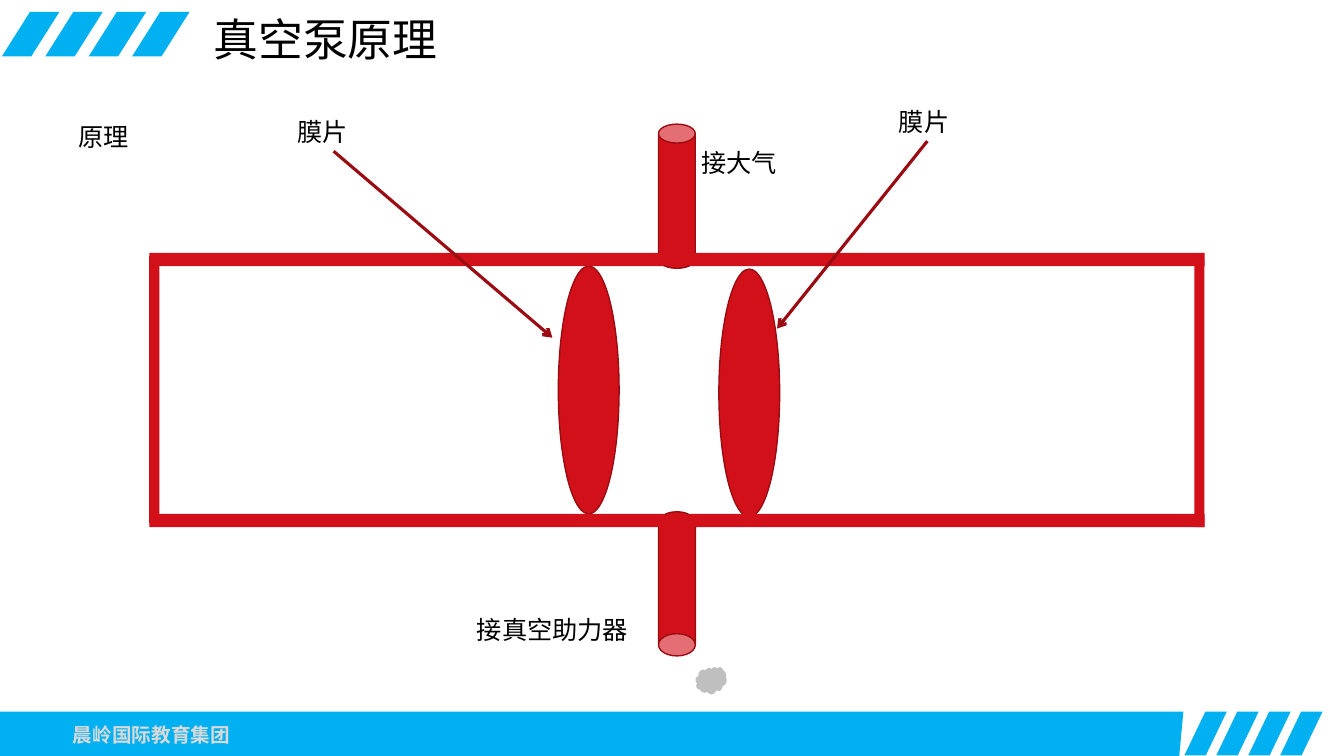
import pptx
import pptx.util
import pptx.dml.color
import pptx.enum.shapes
import pptx.enum.text
import pptx.oxml
import pptx.oxml.ns

Pt = pptx.util.Pt
RGBColor = pptx.dml.color.RGBColor
SHAPE = pptx.enum.shapes.MSO_SHAPE
ALIGN = pptx.enum.text.PP_ALIGN
ANCHOR = pptx.enum.text.MSO_ANCHOR

FONT = "Noto Sans CJK SC"
BLUE = RGBColor(0x00, 0xB0, 0xF0)
RED = RGBColor(0xD1, 0x10, 0x19)
DARK_RED = RGBColor(0x9B, 0x0C, 0x12)
BLACK = RGBColor(0x00, 0x00, 0x00)
PALE_GREY = RGBColor(0xD9, 0xD9, 0xD9)
CLOUD_GREY = RGBColor(0xBF, 0xBF, 0xBF)


def add_sub(parent, tag, **attributes):
    child = pptx.oxml.parse_xml(f"<{tag} {pptx.oxml.ns.nsdecls('a')}/>")
    for key, value in attributes.items():
        child.set(key, value)
    parent.append(child)


def add_text(slide, text, left, top, width, height, size=18, color=BLACK,
             bold=False, align=ALIGN.LEFT, anchor=ANCHOR.TOP):
    box = slide.shapes.add_textbox(Pt(left), Pt(top), Pt(width), Pt(height))
    frame = box.text_frame
    frame.word_wrap = True
    frame.vertical_anchor = anchor
    paragraph = frame.paragraphs[0]
    paragraph.alignment = align
    run = paragraph.add_run()
    run.text = text
    run.font.size = Pt(size)
    run.font.bold = bold
    run.font.color.rgb = color
    run.font.name = FONT
    add_sub(run.font._element, "a:ea", typeface=FONT)


def paint(shape, fill, line=None):
    shape.shadow.inherit = False
    shape.fill.solid()
    shape.fill.fore_color.rgb = fill
    if line is None:
        shape.line.fill.background()
    else:
        shape.line.color.rgb = line
        shape.line.width = Pt(1)


def add_preset(slide, kind, left, top, width, height, fill, line=None):
    shape = slide.shapes.add_shape(kind, Pt(left), Pt(top), Pt(width), Pt(height))
    paint(shape, fill, line)
    return shape


def add_polygon(slide, points, fill):
    corners = [(Pt(x), Pt(y)) for x, y in points]
    builder = slide.shapes.build_freeform(*corners[0])
    builder.add_line_segments(corners[1:], close=True)
    paint(builder.convert_to_shape(), fill)


def add_stripes(slide, left, top, height, slant, band, pitch):
    """Four slanted stripes, one every pitch."""
    for index in range(4):
        x = left + index * pitch
        add_polygon(slide, [(x + slant, top), (x, top + height),
                            (x + band, top + height), (x + slant + band, top)], BLUE)


def add_header(slide, left, top, height):
    add_stripes(slide, left, top, height, slant=20, band=21, pitch=31)
    add_text(slide, "真空泵原理", left + 144, top - 3.6, 455, 46, size=32)


def add_footer(slide, left, top, width, height):
    bar_end = left + width - 114.7
    add_polygon(slide, [(left, top), (bar_end, top),
                        (bar_end - 2.9, top + height), (left, top + height)], BLUE)
    add_stripes(slide, bar_end + 0.7, top, height - 0.4, slant=15, band=15.3, pitch=22.8)
    add_text(slide, "晨岭国际教育集团", left + 40.3, top + 3.6, 136, 26, size=14,
             color=PALE_GREY, bold=True, align=ALIGN.CENTER, anchor=ANCHOR.MIDDLE)


def add_pump(slide, left, top, width, height):
    """Chamber with two membranes and a pipe above and below."""
    center = left + width / 2
    bottom = top + height
    membrane_width, membrane_height = 43.4, 177
    for offset, drop in ((-63, 9.4), (51.7, 11.5)):
        add_preset(slide, SHAPE.OVAL, center + offset - membrane_width / 2, top + drop,
                   membrane_width, membrane_height, RED, DARK_RED)

    pipe_width, pipe_height, overlap = 26.3, 103, 11
    pipes = ((top + overlap - pipe_height, 0, 0.514), (bottom - overlap, 180, 0.604))
    for pipe_top, rotation, lid in pipes:
        pipe = add_preset(slide, SHAPE.CAN, center - pipe_width / 2, pipe_top,
                          pipe_width, pipe_height, RED, DARK_RED)
        pipe.adjustments[0] = lid
        pipe.rotation = rotation

    wall, side, gap = 9.4, 7.2, 18
    half = (width - gap) / 2
    for wall_left in (left, left + half + gap):
        for wall_top in (top, bottom - wall):
            add_preset(slide, SHAPE.RECTANGLE, wall_left, wall_top, half, wall, RED)
    for wall_left, drop in ((left, 2.2), (left + width - side, 5)):
        add_preset(slide, SHAPE.RECTANGLE, wall_left, top + drop, side, height - 5, RED)

    add_text(slide, "接真空助力器", center - 150, bottom + 59, 132, 29)
    add_text(slide, "接大气", center - 21.5, top - 79.2, 132, 29, align=ALIGN.CENTER)
    add_preset(slide, SHAPE.CLOUD, center + 13.3, bottom + 100, 22.3, 19.5, CLOUD_GREY)


def add_membrane_label(slide, left, top, start, tip):
    """Label with an arrow; start and tip are offsets from the label's corner."""
    add_text(slide, "膜片", left, top, 59, 29)
    arrow = slide.shapes.add_connector(
        pptx.enum.shapes.MSO_CONNECTOR.STRAIGHT,
        Pt(left + start[0]), Pt(top + start[1]), Pt(left + tip[0]), Pt(top + tip[1]))
    arrow.line.color.rgb = DARK_RED
    arrow.line.width = Pt(2.25)
    add_sub(arrow.line._get_or_add_ln(), "a:tailEnd", type="arrow")
    add_sub(arrow._element.spPr, "a:effectLst")


def main():
    deck = pptx.Presentation()
    deck.slide_width, deck.slide_height = Pt(960), Pt(540)
    slide = deck.slides.add_slide(deck.slide_layouts[6])
    add_footer(slide, 0, 508.3, 960, 31.7)
    add_header(slide, 1.4, 8.6, 31.7)
    add_text(slide, "原理", 49, 82.8, 320, 29)
    add_pump(slide, 106.6, 180.7, 753.8, 195.8)
    add_membrane_label(slide, 205.2, 79.2, start=(33.1, 28.8), tip=(189.4, 162))
    add_membrane_label(slide, 635, 72.7, start=(27.4, 28.1), tip=(-79.9, 162))
    deck.save("out.pptx")


if __name__ == "__main__":
    main()
